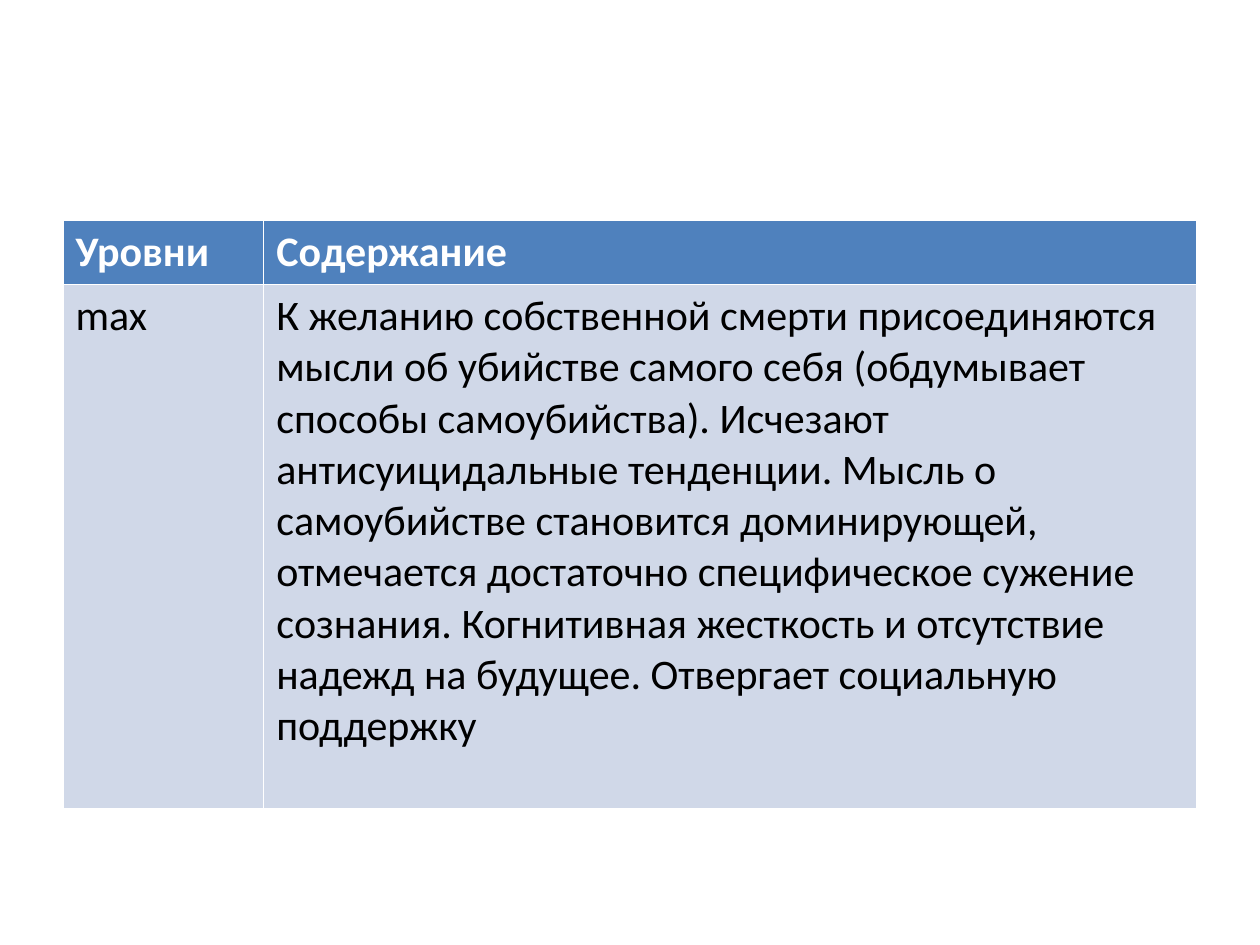
from pptx import Presentation
from pptx.dml.color import RGBColor
from pptx.util import Inches, Pt

BLANK_LAYOUT = 6
FONT = "Calibri"
COLUMN_SHARES = (0.177, 0.823)
ROW_SHARES = (0.108, 0.892)
HEADER = ("Уровни", "Содержание")
LEVEL = (
    "max",
    "К желанию собственной смерти присоединяются мысли об убийстве самого "
    "себя (обдумывает способы самоубийства). Исчезают антисуицидальные "
    "тенденции. Мысль о самоубийстве становится доминирующей, отмечается "
    "достаточно специфическое сужение сознания. Когнитивная жесткость и "
    "отсутствие надежд на будущее. Отвергает социальную поддержку",
)


def color(value):
    return RGBColor.from_string(value)


def fill_cell(cell, text, fill, ink, bold):
    cell.fill.solid()
    cell.fill.fore_color.rgb = color(fill)
    r = cell.text_frame.paragraphs[0].add_run()
    r.text = text
    r.font.name = FONT
    r.font.size = Pt(24)
    r.font.bold = bold
    r.font.color.rgb = color(ink)


def add_levels_table(slide, left, top, width, height):
    """Place the table; its default style draws the white cell borders."""
    table = slide.shapes.add_table(2, 2, left, top, width, height).table
    for column, share in zip(table.columns, COLUMN_SHARES):
        column.width = int(width * share)
    for row, share in zip(table.rows, ROW_SHARES):
        row.height = int(height * share)
    styles = (("4F81BD", "FFFFFF", True), ("D0D8E8", "000000", False))
    for row, texts, style in zip(table.rows, (HEADER, LEVEL), styles):
        for cell, text in zip(row.cells, texts):
            fill_cell(cell, text, *style)


def main():
    prs = Presentation()
    prs.slide_width, prs.slide_height = Inches(10), Inches(7.5)
    slide = prs.slides.add_slide(prs.slide_layouts[BLANK_LAYOUT])
    add_levels_table(slide, Inches(0.5), Inches(1.75), Inches(9), Inches(4.67))
    prs.save("out.pptx")


if __name__ == "__main__":
    main()
